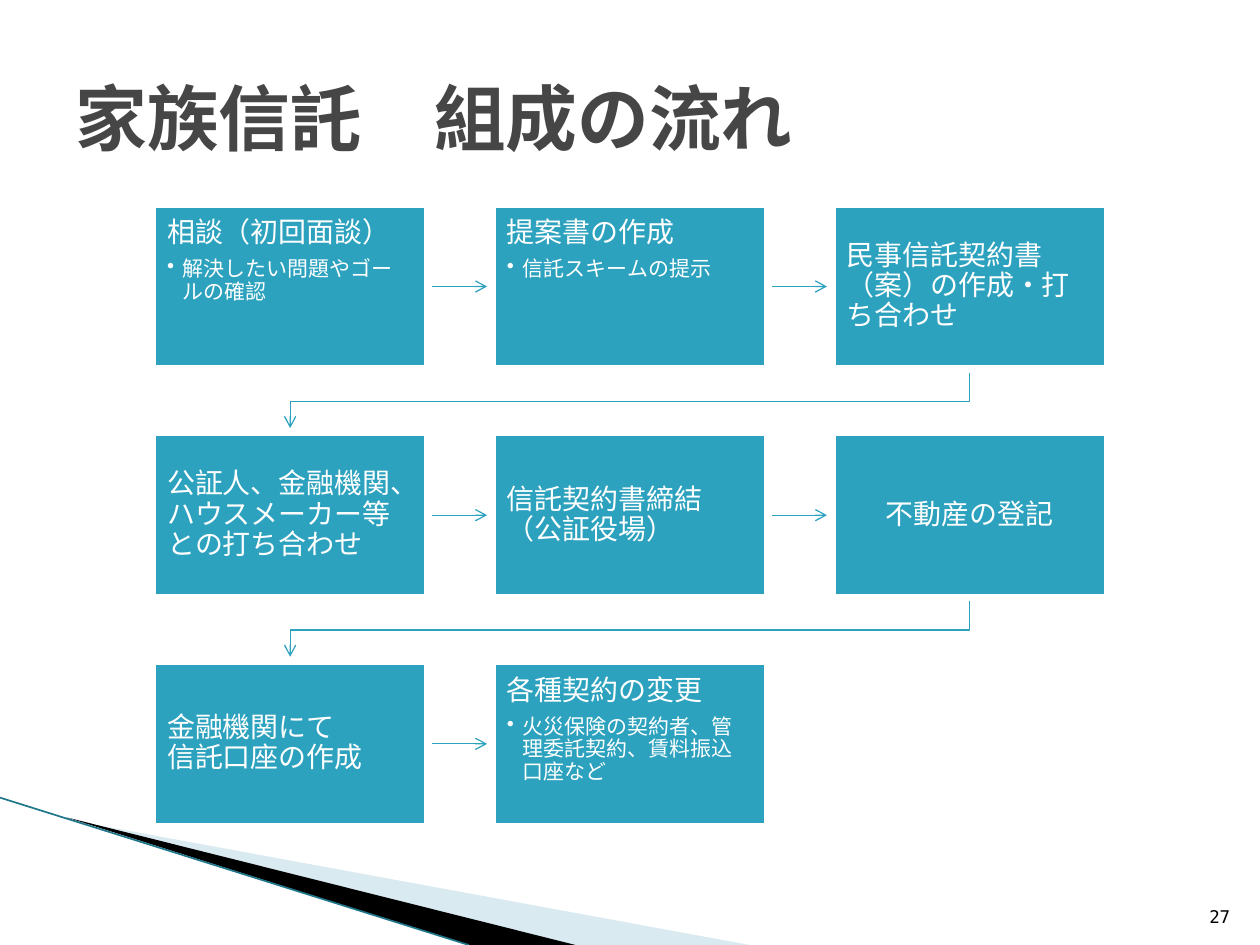
import pptx
import pptx.util
import pptx.dml.color
import pptx.enum.shapes
import pptx.enum.text
import pptx.oxml.ns
from lxml import etree

Cm, Pt = pptx.util.Cm, pptx.util.Pt
ANCHOR, ALIGN = pptx.enum.text.MSO_ANCHOR, pptx.enum.text.PP_ALIGN
STRAIGHT = pptx.enum.shapes.MSO_CONNECTOR.STRAIGHT
RECTANGLE = pptx.enum.shapes.MSO_SHAPE.RECTANGLE
FONT = "DejaVu Sans Mono"
TEAL, WHITE, BLACK = "2DA2BF", "FFFFFF", "000000"

TITLE = "家族信託　組成の流れ"
PAGE_NUMBER = "27"
STEPS = [
    (["相談（初回面談）"], "解決したい問題やゴールの確認"),
    (["提案書の作成"], "信託スキームの提示"),
    (["民事信託契約書（案）の作成・打ち合わせ"], None),
    (["公証人、金融機関、ハウスメーカー等との打ち合わせ"], None),
    (["信託契約書締結", "（公証役場）"], None),
    (["不動産の登記"], None),
    (["金融機関にて", "信託口座の作成"], None),
    (["各種契約の変更"], "火災保険の契約者、管理委託契約、賃料振込口座など"),
]
CENTRED_STEP = 5
WEDGES = [
    ([(1.4, 16.53), (15.11, 19.05), (11.58, 19.05)], "A0CBDC", 40),
    ([(1.35, 16.48), (11.6, 19.05), (9.45, 19.05)], BLACK, 100),
]
EDGE = (0, 16.08, 9.45, 19.05)

COLUMNS = 3
LEFT, TOP, WIDTH, HEIGHT = 3.07, 4.11, 5.56, 3.33
PITCH_X, PITCH_Y = 6.85, 4.61
REACH, TURN = 1.19, 0.65


def color(value):
    return pptx.dml.color.RGBColor.from_string(value)


def add_child(parent, tag, **attributes):
    return etree.SubElement(parent, pptx.oxml.ns.qn(tag), attributes)


def paint(shape, value):
    shape.shadow.inherit = False
    shape.fill.solid()
    shape.fill.fore_color.rgb = color(value)


def style_line(shape, value, width, arrow=False):
    shape.line.color.rgb = color(value)
    shape.line.width = Pt(width)
    if arrow:
        add_child(shape.line._get_or_add_ln(), "a:tailEnd", type="arrow")


def add_line(page, x1, y1, x2, y2):
    line = page.shapes.add_connector(STRAIGHT, Cm(x1), Cm(y1), Cm(x2), Cm(y2))
    add_child(line._element.spPr, "a:effectLst")
    return line


def add_outline(page, points, closed):
    corners = [(Cm(x), Cm(y)) for x, y in points]
    builder = page.shapes.build_freeform(*corners[0], scale=1.0)
    builder.add_line_segments(corners[1:], close=closed)
    shape = builder.convert_to_shape()
    shape.shadow.inherit = False
    return shape


def add_span(para, text, size, value, bold=False):
    span = para.add_run()
    span.text = text
    span.font.name = FONT
    span.font.size = Pt(size)
    span.font.bold = bold
    span.font.color.rgb = color(value)
    add_child(span._r.get_or_add_rPr(), "a:ea", typeface=FONT)


def add_label(page, place, text, size, value, anchor, align, bold=False):
    box = page.shapes.add_textbox(*(Cm(length) for length in place))
    frame = box.text_frame
    frame.word_wrap = True
    frame.vertical_anchor = anchor
    para = frame.paragraphs[0]
    para.alignment = align
    add_span(para, text, size, value, bold)


def place_step(index):
    row, column = divmod(index, COLUMNS)
    return LEFT + column * PITCH_X, TOP + row * PITCH_Y


def add_step(page, index, lines, detail):
    x, y = place_step(index)
    box = page.shapes.add_shape(RECTANGLE, Cm(x), Cm(y), Cm(WIDTH), Cm(HEIGHT))
    paint(box, TEAL)
    style_line(box, WHITE, 4.33)
    frame = box.text_frame
    frame.word_wrap = True
    frame.margin_left = frame.margin_right = Cm(0.3)
    frame.margin_top = frame.margin_bottom = Cm(0.3)
    frame.vertical_anchor = ANCHOR.TOP if detail else ANCHOR.MIDDLE
    para = frame.paragraphs[0]
    para.alignment = ALIGN.CENTER if index == CENTRED_STEP else ALIGN.LEFT
    para.line_spacing = 0.9
    for number, text in enumerate(lines):
        if number:
            para.add_line_break()
        add_span(para, text, 16, WHITE)
    if detail:
        para.space_after = Pt(5.6)
        para = frame.add_paragraph()
        para.alignment = ALIGN.LEFT
        para.level = 1
        para.line_spacing = 0.9
        properties = para._p.get_or_add_pPr()
        properties.set("marL", str(Cm(0.32)))
        properties.set("indent", str(-Cm(0.32)))
        add_child(properties, "a:buChar", char="•")
        add_span(para, detail, 12, WHITE)
    return box


def add_arrow(page, index, box):
    x, y = place_step(index)
    if index % COLUMNS < COLUMNS - 1:
        middle = y + HEIGHT / 2
        arrow = add_line(page, x + WIDTH, middle, x + WIDTH + REACH, middle)
        arrow.begin_connect(box, 3)
    else:
        start, end, bottom = x + WIDTH / 2, LEFT + WIDTH / 2, y + HEIGHT
        arrow = add_outline(page, [(start, bottom), (start, bottom + TURN),
                                   (end, bottom + TURN), (end, bottom + REACH)], False)
        arrow.fill.background()
    style_line(arrow, TEAL, 0.75, arrow=True)
    box._element.addprevious(arrow._element)


def main():
    deck = pptx.Presentation()
    deck.slide_width, deck.slide_height = Cm(25.4), Cm(19.05)
    page = deck.slides.add_slide(deck.slide_layouts[6])
    for points, value, opacity in WEDGES:
        wedge = add_outline(page, points, True)
        paint(wedge, value)
        wedge.line.fill.background()
        if opacity < 100:
            fill = wedge._element.spPr.find(".//" + pptx.oxml.ns.qn("a:srgbClr"))
            add_child(fill, "a:alpha", val=str(opacity * 1000))
    style_line(add_line(page, *EDGE), "1F768B", 0.95)
    for index, (lines, detail) in enumerate(STEPS):
        box = add_step(page, index, lines, detail)
        if index < len(STEPS) - 1:
            add_arrow(page, index, box)
    add_label(page, (1.27, 0.76, 22.86, 3.18), TITLE, 41, "464646",
              ANCHOR.MIDDLE, ALIGN.LEFT, bold=True)
    add_label(page, (24.03, 17.8, 1.02, 1.02), PAGE_NUMBER, 10, BLACK,
              ANCHOR.BOTTOM, ALIGN.RIGHT)
    deck.save("out.pptx")


if __name__ == "__main__":
    main()
